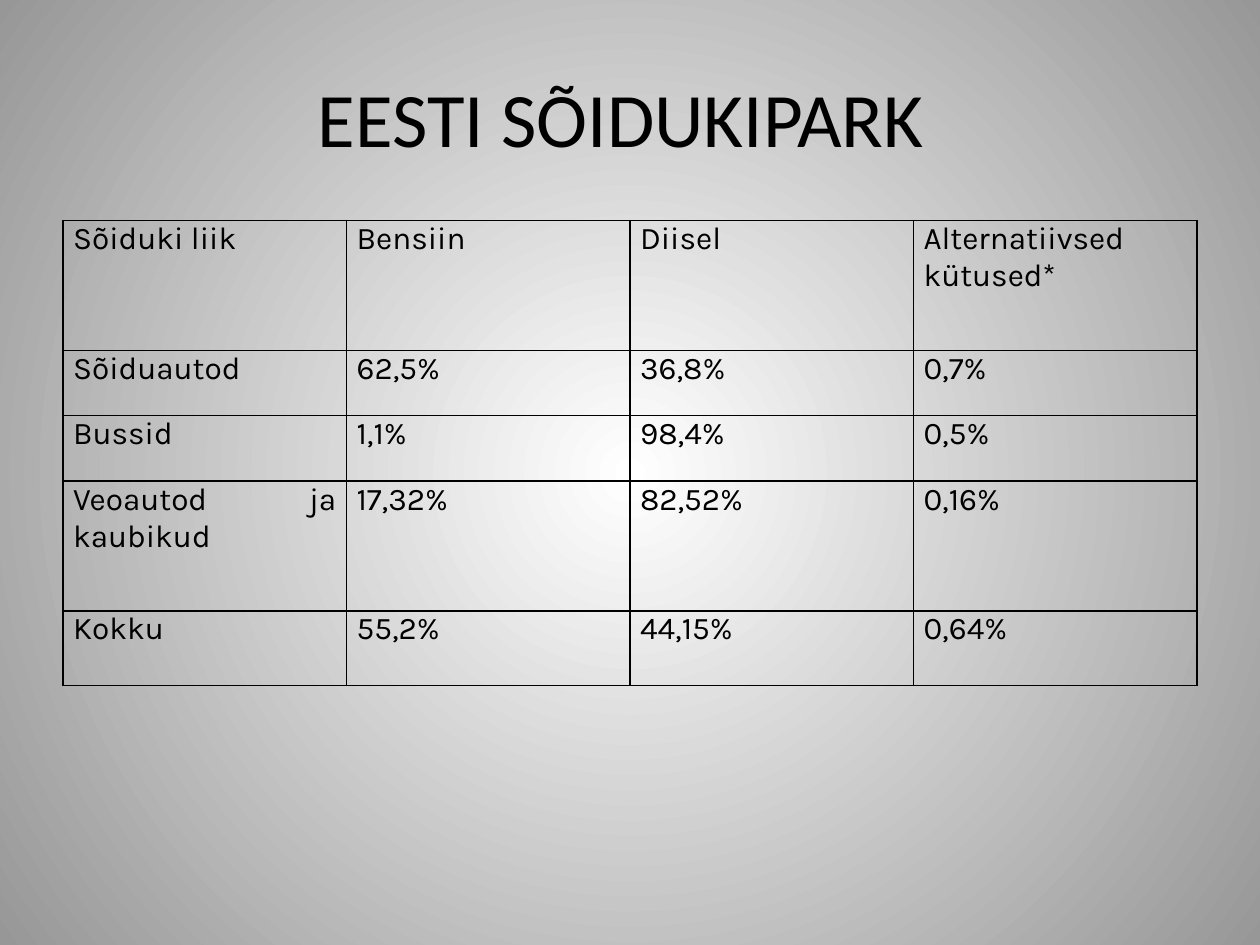
from lxml.etree import SubElement as Sub
from pptx import Presentation
from pptx.dml.color import RGBColor as RGB
from pptx.enum.text import MSO_ANCHOR as Anchor, PP_ALIGN as Align
from pptx.oxml import parse_xml
from pptx.oxml.ns import nsdecls, qn
from pptx.util import Inches, Pt

COLORS = {"ink": "000000", "core": "FFFFFF", "edge": "979797"}
ROWS = [
    ["Sõiduki liik", "Bensiin", "Diisel", "Alternatiivsed kütused*"],
    ["Sõiduautod", "62,5%", "36,8%", "0,7%"],
    ["Bussid", "1,1%", "98,4%", "0,5%"],
    ["Veoautod ja kaubikud", "17,32%", "82,52%", "0,16%"],
    ["Kokku", "55,2%", "44,15%", "0,64%"],
]
HEIGHTS = [1.03, 0.52, 0.52, 1.03, 0.59]
COL = 2.25
CELL = {
    "margin_left": Inches(0.08),
    "margin_right": Inches(0.08),
    "margin_top": 0,
    "margin_bottom": 0,
    "vertical_anchor": Anchor.TOP,
}
PLAIN = {"first_row": False, "horz_banding": False}


def apply(item, values):
    for name, value in values.items():
        setattr(item, name, value)


def write(frame, text, face, size, align):
    frame.text = text
    para = frame.paragraphs[0]
    para.alignment = align
    font = para.runs[0].font
    apply(font, {"name": face, "size": Pt(size)})
    font.color.rgb = RGB.from_string(COLORS["ink"])


def add_glow(slide):
    """Give the slide a radial gradient, light in the middle."""
    stops = "".join(
        f'<a:gs pos="{pos}"><a:srgbClr val="{COLORS[key]}"/></a:gs>'
        for pos, key in [(0, "core"), (100000, "edge")]
    )
    back = parse_xml(
        f'<p:bg {nsdecls("p", "a")}><p:bgPr><a:gradFill rotWithShape="1">'
        f'<a:gsLst>{stops}</a:gsLst><a:path path="circle">'
        '<a:fillToRect l="50000" t="50000" r="50000" b="50000"/>'
        "</a:path></a:gradFill><a:effectLst/></p:bgPr></p:bg>"
    )
    slide.element.cSld.insert(0, back)


def add_title(slide, text):
    title = slide.shapes.title
    apply(title, {"left": Inches(0.5), "top": Inches(0.3),
                  "width": Inches(9), "height": Inches(1.25)})
    title.text_frame.vertical_anchor = Anchor.MIDDLE
    write(title.text_frame, text, "Calibri", 44, Align.CENTER)


def add_border(cell):
    props = cell._tc.get_or_add_tcPr()
    for side in "LRTB":
        line = Sub(props, qn(f"a:ln{side}"), w=str(Pt(1)))
        fill = Sub(line, qn("a:solidFill"))
        Sub(fill, qn("a:srgbClr"), val=COLORS["ink"])


def add_grid(slide):
    cols = len(ROWS[0])
    table = slide.shapes.add_table(
        len(ROWS), cols, Inches(0.5), Inches(1.75),
        Inches(COL * cols), Inches(sum(HEIGHTS)),
    ).table
    apply(table, PLAIN)
    for col in table.columns:
        col.width = Inches(COL)
    for row, high, texts in zip(table.rows, HEIGHTS, ROWS):
        row.height = Inches(high)
        for cell, text in zip(row.cells, texts):
            apply(cell, CELL)
            add_border(cell)
            cell.fill.background()
            write(cell.text_frame, text, "Karla", 18, Align.JUSTIFY)


def main():
    deck = Presentation()
    apply(deck, {"slide_width": Inches(10), "slide_height": Inches(7.5)})
    slide = deck.slides.add_slide(deck.slide_layouts[5])
    add_glow(slide)
    add_title(slide, "EESTI SÕIDUKIPARK ")
    add_grid(slide)
    deck.save("out.pptx")


if __name__ == "__main__":
    main()
